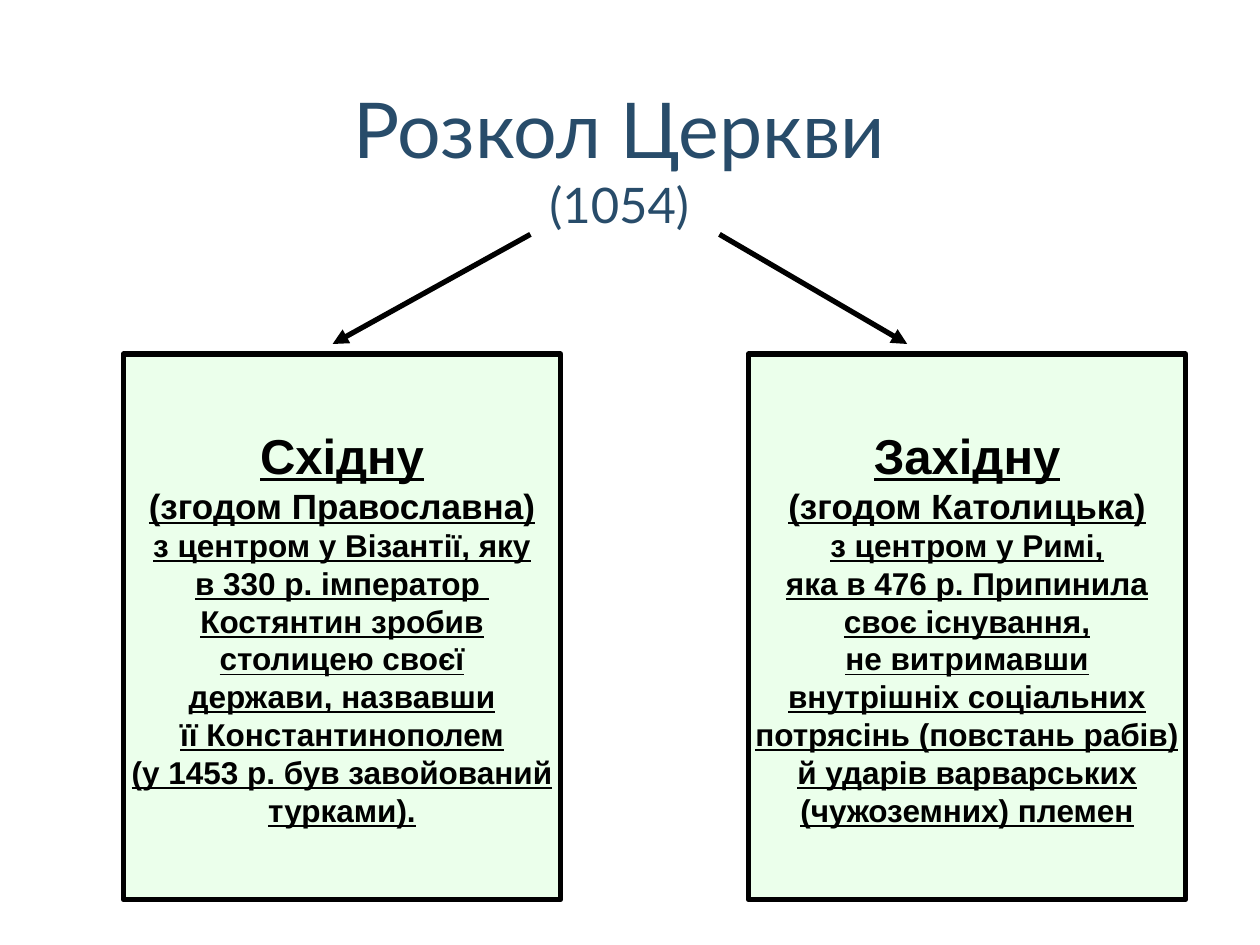
from pptx import Presentation
from pptx.dml.color import RGBColor as RGB
from pptx.enum.shapes import MSO_CONNECTOR as LINE, MSO_SHAPE as SHAPE
from pptx.enum.text import MSO_ANCHOR as ANCHOR, MSO_AUTO_SIZE as FIT, PP_ALIGN as ALIGN
from pptx.oxml.ns import qn
from pptx.util import Inches, Pt
from lxml.etree import SubElement

# Content
TITLE = ("Розкол Церкви", "(1054)")
BOXES = [
    {"left": 5.94, "arrow": (5.71, 7.2), "text": [
        "Західну", "(згодом Католицька)", "з центром у Римі,",
        "яка в 476 р. Припинила", "своє існування,", "не витримавши",
        "внутрішніх соціальних", "потрясінь (повстань рабів)",
        "й ударів варварських", "(чужоземних) племен"]},
    {"left": 0.98, "arrow": (4.21, 2.64), "text": [
        "Східну", "(згодом Православна)", "з центром у Візантії, яку",
        "в 330 р. імператор ", "Костянтин зробив", "столицею своєї",
        "держави, назвавши", "її Константинополем",
        "(у 1453 р. був завойований", "турками)."]},
]

THEME = {
    "title": RGB(0x28, 0x4C, 0x6A), "ink": RGB(0, 0, 0), "fill": RGB(0xEB, 0xFF, 0xEB),
    "head": "Lato", "body": "Arial", "line": Pt(3),
    "title_sizes": (44, 28), "box_sizes": (28, 20, 18),
}
TOP, WIDTH, HEIGHT = 2.81, 3.47, 4.33
ARROW_Y = (1.86, 2.73)


def style(font, name, size, color):
    font.name, font.size, font.color.rgb = name, Pt(size), color


def add_title(slide):
    title = slide.shapes.title
    title.left, title.top, title.width, title.height = map(Inches, (0.5, 0.75, 8.83, 1))
    frame = title.text_frame
    frame.text = "\v".join(TITLE)
    frame.auto_size, frame.vertical_anchor = FIT.NONE, ANCHOR.MIDDLE
    para = frame.paragraphs[0]
    para.alignment = ALIGN.CENTER
    for run, size in zip(para.runs, THEME["title_sizes"]):
        style(run.font, THEME["head"], size, THEME["title"])


def add_arrow(slide, start, end):
    arrow = slide.shapes.add_connector(
        LINE.STRAIGHT, Inches(start), Inches(ARROW_Y[0]), Inches(end), Inches(ARROW_Y[1]))
    arrow.line.color.rgb, arrow.line.width = THEME["ink"], THEME["line"]
    SubElement(arrow.line._get_or_add_ln(), qn("a:tailEnd"), type="triangle")
    SubElement(arrow._element.spPr, qn("a:effectLst"))


def add_box(slide, left, lines):
    box = slide.shapes.add_shape(
        SHAPE.RECTANGLE, Inches(left), Inches(TOP), Inches(WIDTH), Inches(HEIGHT))
    box.shadow.inherit = False
    box.fill.solid()
    box.fill.fore_color.rgb = THEME["fill"]
    box.line.color.rgb, box.line.width = THEME["ink"], THEME["line"]
    frame = box.text_frame
    frame.text = "\n".join(lines)
    frame.word_wrap, frame.vertical_anchor = False, ANCHOR.MIDDLE
    sizes = THEME["box_sizes"]
    for i, para in enumerate(frame.paragraphs):
        para.alignment = ALIGN.CENTER
        font = para.runs[0].font
        style(font, THEME["body"], sizes[min(i, len(sizes) - 1)], THEME["ink"])
        font.bold = font.underline = True


def main():
    deck = Presentation()
    deck.slide_width, deck.slide_height = Inches(10), Inches(7.5)
    slide = deck.slides.add_slide(deck.slide_layouts[5])
    add_title(slide)
    # Arrows lead from the title to each box
    for box in BOXES:
        add_arrow(slide, *box["arrow"])
    for box in BOXES:
        add_box(slide, box["left"], box["text"])
    deck.save("out.pptx")


if __name__ == "__main__":
    main()
